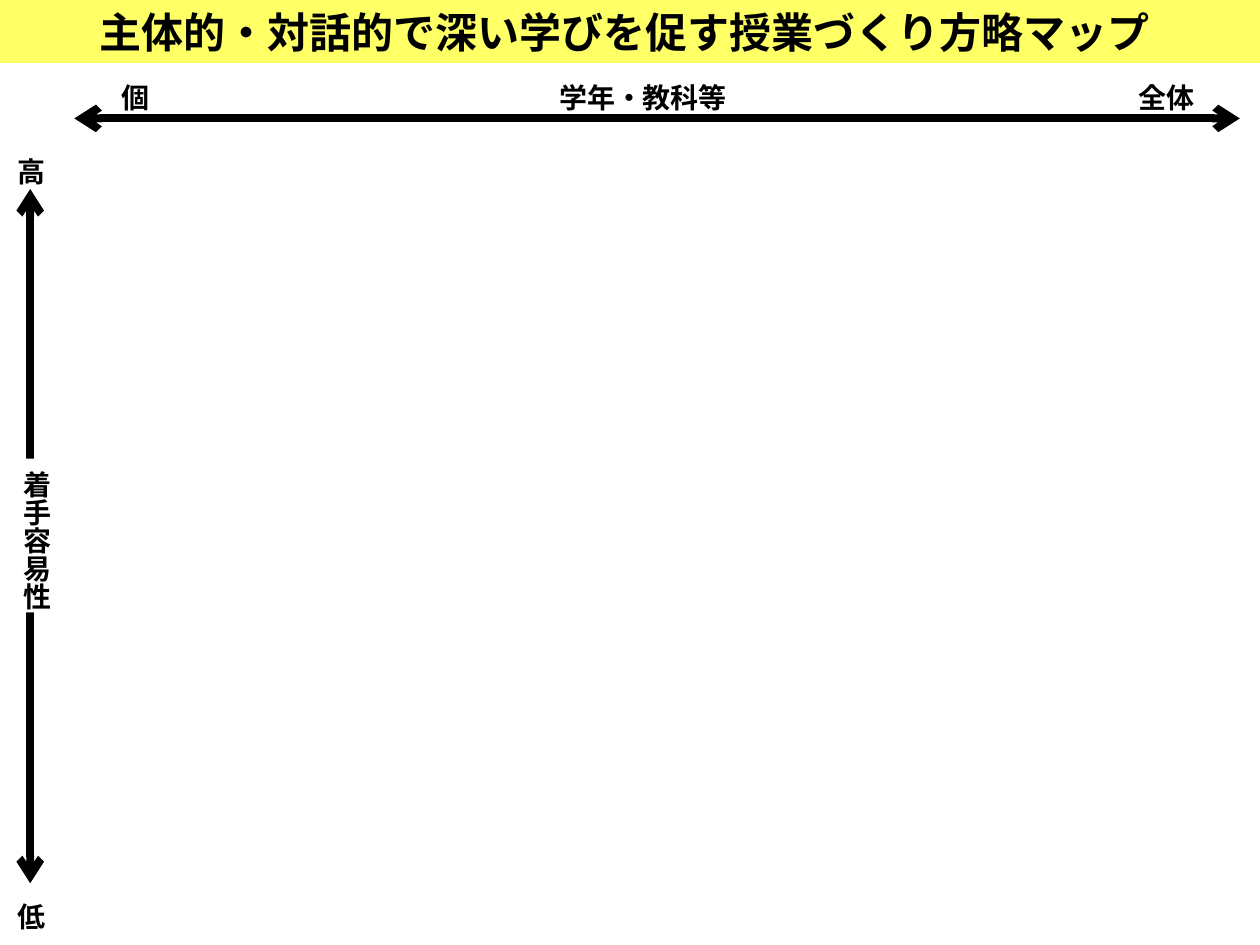
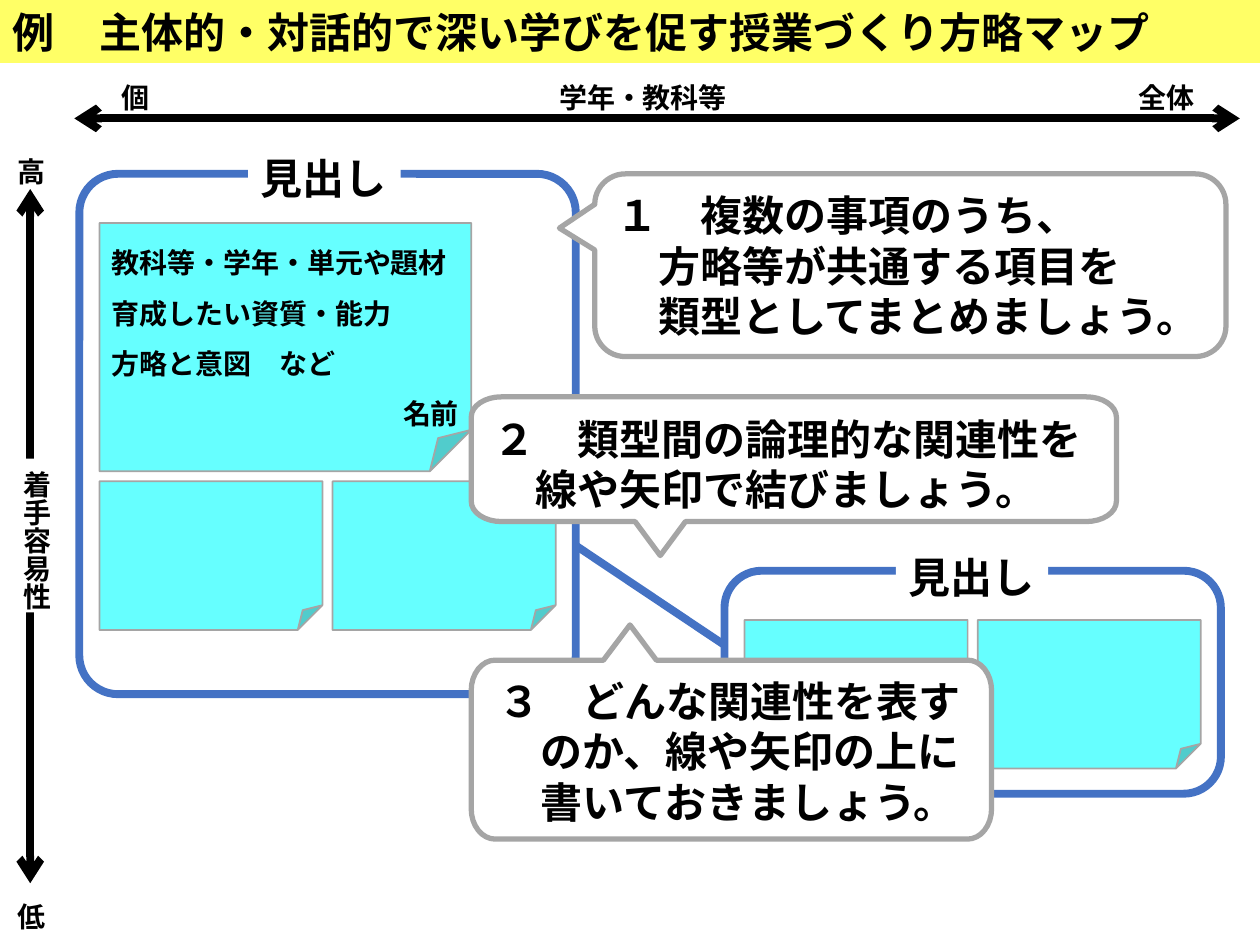
from dataclasses import dataclass
from math import cos, pi, sin

from lxml.etree import SubElement
from pptx import Presentation
from pptx.dml.color import RGBColor
from pptx.enum.lang import MSO_LANGUAGE_ID
from pptx.enum.shapes import MSO_CONNECTOR, MSO_SHAPE
from pptx.enum.text import MSO_ANCHOR, MSO_AUTO_SIZE, PP_ALIGN
from pptx.oxml.ns import qn
from pptx.util import Inches, Pt


@dataclass(frozen=True)
class Theme:
    font: str = "Noto Sans CJK JP"
    text: str = "000000"
    paper: str = "FFFFFF"
    band: str = "FFFF66"
    sticky: str = "66FFFF"
    frame: str = "4472C4"
    outline: str = "A5A5A5"
    large: int = 24
    small: int = 16
    heavy: float = 4.5
    medium: float = 3
    thin: float = 1


THEME = Theme()
TITLE = "主体的・対話的で深い学びを促す授業づくり方略マップ"
SMALL_STICKY = (1.77, 1.18)
STICKY_STEP = 1.85


def inches(values):
    return [Inches(v) for v in values]


# Text
def write(sp, lines, size, anchor=MSO_ANCHOR.TOP, wrap=False, spacing=None):
    tf = sp.text_frame
    tf.text = "\n".join(lines)
    tf.word_wrap = wrap
    tf.vertical_anchor = anchor
    tf.auto_size = MSO_AUTO_SIZE.NONE if wrap else MSO_AUTO_SIZE.SHAPE_TO_FIT_TEXT
    for p in tf.paragraphs:
        p.alignment = PP_ALIGN.LEFT
        if spacing:
            p.line_spacing = spacing
        for r in p.runs:
            r.font.size = Pt(size)
            r.font.bold = True
            r.font.color.rgb = RGBColor.from_string(THEME.text)
            r.font.language_id = MSO_LANGUAGE_ID.JAPANESE
            r.font.name = THEME.font
            SubElement(r.font._element, qn("a:ea"), typeface=THEME.font)
    return tf


def add_label(slide, box, lines, size=THEME.small):
    write(slide.shapes.add_textbox(*inches(box)), lines, size)


# Shapes and lines
def paint(sp, fill=None, line=None, width=THEME.thin):
    sp.shadow.inherit = False
    if fill:
        sp.fill.solid()
        sp.fill.fore_color.rgb = RGBColor.from_string(fill)
    else:
        sp.fill.background()
    if line:
        sp.line.color.rgb = RGBColor.from_string(line)
        sp.line.width = Pt(width)
    else:
        sp.line.fill.background()
    return sp


def add_box(slide, kind, box, **style):
    return paint(slide.shapes.add_shape(kind, *inches(box)), **style)


def add_line(slide, start, end, color, arrows=False):
    cxn = slide.shapes.add_connector(MSO_CONNECTOR.STRAIGHT, *inches(start + end))
    cxn.line.color.rgb = RGBColor.from_string(color)
    cxn.line.width = Pt(THEME.heavy)
    if arrows:
        ln = cxn.line._get_or_add_ln()
        for tag in ("a:headEnd", "a:tailEnd"):
            SubElement(ln, qn(tag), type="arrow")
    SubElement(cxn._element.spPr, qn("a:effectLst"))


def add_sticky(slide, left, top, size=SMALL_STICKY):
    return add_box(slide, MSO_SHAPE.FOLDED_CORNER, (left, top, *size),
                   fill=THEME.sticky, line=THEME.outline)


def add_sticky_pair(slide, left, top):
    for i in (1, 0):
        add_sticky(slide, left + i * STICKY_STEP, top)


def add_frame(slide, box, fill=None):
    return add_box(slide, MSO_SHAPE.ROUNDED_RECTANGLE, box, fill=fill,
                   line=THEME.frame, width=THEME.heavy)


def add_heading(slide, left, top):
    sp = add_box(slide, MSO_SHAPE.RECTANGLE, (left, top, 1.21, 0.5), fill=THEME.paper)
    write(sp, ["見出し"], THEME.large)


def add_pointed_callout(slide, body, radii, tip, half_base):
    """Rounded bubble whose pointer leaves the top or the bottom edge."""
    left, top, width, height = body
    rx, ry = radii
    right, bottom = left + width, top + height
    centres = [(left + rx, top + ry), (right - rx, top + ry),
               (right - rx, bottom - ry), (left + rx, bottom - ry)]
    upward = tip[1] < top
    points = []
    for i, (cx, cy) in enumerate(centres):
        for step in range(9):
            angle = pi + (i + step / 8) * pi / 2
            points.append((cx + rx * cos(angle), cy + ry * sin(angle)))
        if i == (0 if upward else 2):
            edge, side = (top, -half_base) if upward else (bottom, half_base)
            points += [(tip[0] + side, edge), tip, (tip[0] - side, edge)]
    points = [tuple(inches(point)) for point in points]
    builder = slide.shapes.build_freeform(*points[0])
    builder.add_line_segments(points[1:], close=True)
    paint(builder.convert_to_shape(), THEME.paper, THEME.outline, THEME.medium)


# Parts shared by both slides
def add_map_slide(prs):
    slide = prs.slides.add_slide(prs.slide_layouts[5])
    title = slide.shapes.title
    title.left, title.top, title.width, title.height = inches((0.69, 0, 8.62, 0.5))
    write(title, [TITLE], THEME.large)
    band = add_box(slide, MSO_SHAPE.RECTANGLE, (0, 0, 10, 0.5), fill=THEME.band)
    title.element.addprevious(band.element)
    return slide


def add_axes(slide):
    add_line(slide, (0.59, 0.94), (9.84, 0.94), THEME.text, arrows=True)
    for left, width, text in ((4.34, 1.55, "学年・教科等"), (0.87, 0.43, "個"),
                              (8.94, 0.65, "全体")):
        add_label(slide, (left, 0.59, width, 0.37), [text])

    add_line(slide, (0.24, 1.5), (0.24, 7.01), THEME.text, arrows=True)
    name = add_box(slide, MSO_SHAPE.RECTANGLE, (0, 3.64, 0.47, 1.22), fill=THEME.paper)
    tf = write(name, ["着手容易性"], THEME.small)
    tf._txBody.bodyPr.set("vert", "eaVert")
    for top, text in ((1.18, "高"), (7.09, "低")):
        add_label(slide, (0.04, top, 0.43, 0.37), [text])


# Example content
def add_groups(slide):
    add_sticky_pair(slide, 5.91, 4.92)
    add_frame(slide, (5.75, 4.53, 3.94, 1.77))
    add_heading(slide, 7.11, 4.33)

    frame = add_frame(slide, (0.63, 1.38, 3.94, 4.13), THEME.paper)
    frame.adjustments[0] = 0.078
    add_sticky_pair(slide, 0.79, 3.82)
    sticky = add_sticky(slide, 0.79, 1.77, (2.95, 1.97))
    tf = write(sticky, ["教科等・学年・単元や題材", "育成したい資質・能力",
                        "方略と意図　など", "名前"], THEME.small, wrap=True, spacing=1.5)
    tf.paragraphs[-1].alignment = PP_ALIGN.RIGHT
    add_heading(slide, 1.97, 1.16)


def add_instructions(slide):
    first = add_box(slide, MSO_SHAPE.ROUNDED_RECTANGULAR_CALLOUT, (4.72, 1.38, 5.01, 1.45),
                    fill=THEME.paper, line=THEME.outline, width=THEME.medium)
    for i, value in enumerate((-0.556, -0.203, 0.167)):
        first.adjustments[i] = value
    write(first, ["１　複数の事項のうち、", "　方略等が共通する項目を",
                  "　類型としてまとめましょう。"], THEME.large, MSO_ANCHOR.MIDDLE)

    add_line(slide, (4.57, 4.33), (5.75, 5.12), THEME.frame)

    add_pointed_callout(slide, (3.74, 3.15, 5.12, 0.99), (0.24, 0.16), (5.24, 4.41), 0.2)
    add_label(slide, (3.82, 3.23, 4.91, 0.91),
              ["２　類型間の論理的な関連性を", "　線や矢印で結びましょう。"], THEME.large)

    add_pointed_callout(slide, (3.74, 5.24, 4.13, 1.42), (0.19, 0.24), (5, 4.96), 0.21)
    add_label(slide, (3.86, 5.31, 3.9, 1.31),
              ["３　どんな関連性を表す", "　のか、線や矢印の上に",
               "　書いておきましょう。"], THEME.large)


def main():
    prs = Presentation()
    prs.slide_width, prs.slide_height = Inches(10), Inches(7.5)

    # Blank map
    add_axes(add_map_slide(prs))

    # Worked example
    example = add_map_slide(prs)
    add_label(example, (0, 0, 0.54, 0.5), ["例"], THEME.large)
    add_groups(example)
    add_instructions(example)
    add_axes(example)

    prs.save("out.pptx")


if __name__ == "__main__":
    main()
